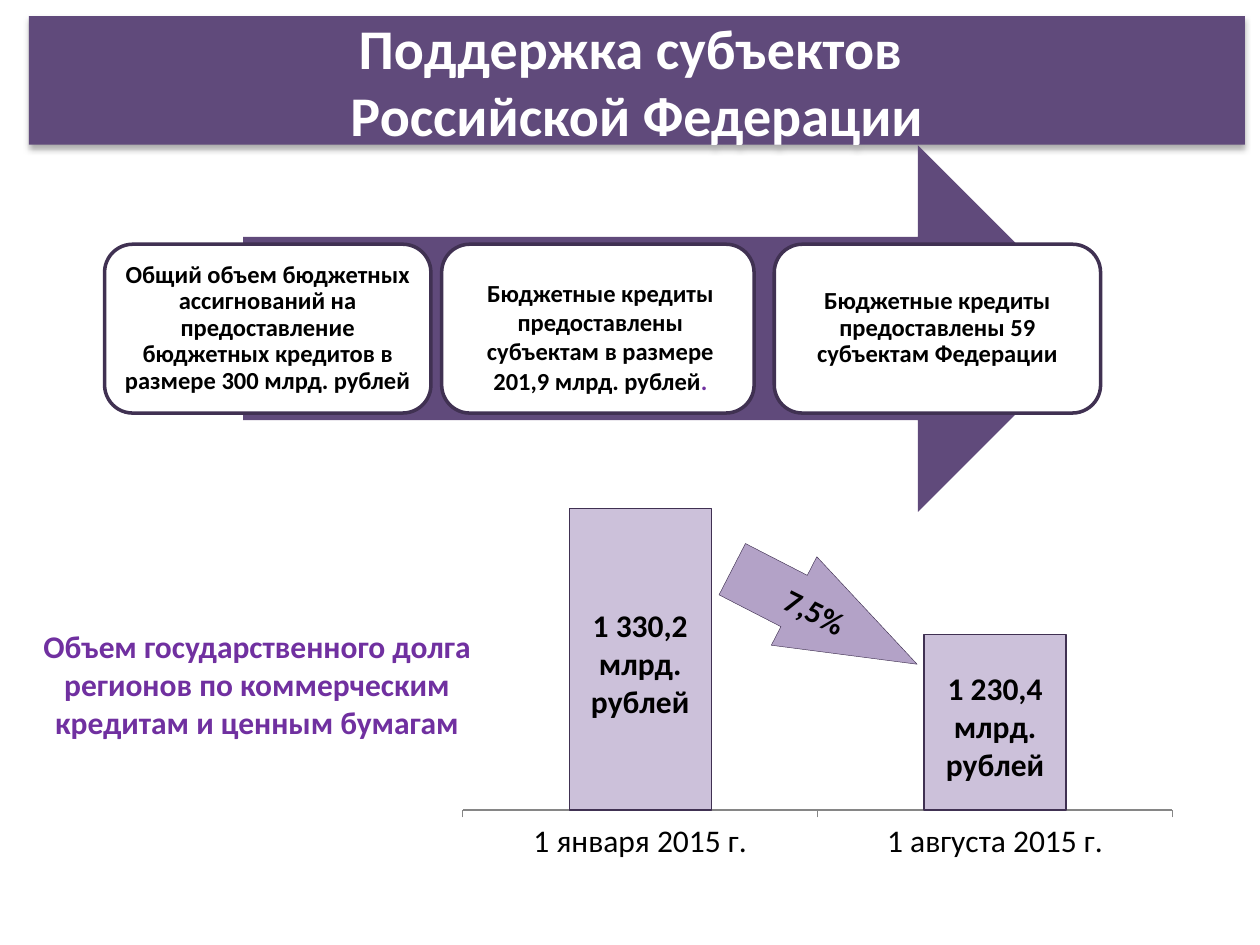
from lxml import etree
from pptx import Presentation
from pptx.chart.data import CategoryChartData
from pptx.dml.color import RGBColor
from pptx.enum.chart import XL_CHART_TYPE as ChartType, XL_TICK_MARK as Tick
from pptx.enum.shapes import MSO_SHAPE as Shape
from pptx.enum.text import MSO_ANCHOR as Anchor, MSO_AUTO_SIZE as AutoSize, PP_ALIGN as Align
from pptx.oxml import parse_xml
from pptx.oxml.ns import nsdecls
from pptx.util import Inches, Pt

PURPLE = RGBColor(0x60, 0x4A, 0x7B)
OUTLINE = RGBColor(0x40, 0x31, 0x52)
LILAC = RGBColor(0xB3, 0xA2, 0xC7)
PALE_LILAC = RGBColor(0xCC, 0xC1, 0xDA)
VIOLET = RGBColor(0x70, 0x30, 0xA0)
GREY = RGBColor(0x86, 0x86, 0x86)
WHITE = RGBColor(0xFF, 0xFF, 0xFF)
BLACK = RGBColor(0, 0, 0)
FONT = "Calibri"

prs = Presentation()
prs.slide_width, prs.slide_height = Inches(10), Inches(7.5)
slide = prs.slides.add_slide(prs.slide_layouts[5])
shapes = slide.shapes


def area(left, top, width, height):
    """Turn percentages of the slide into a position and size."""
    across, down = prs.slide_width / 100, prs.slide_height / 100
    return [round(v) for v in (left * across, top * down, width * across, height * down)]


def write(frame, text, size, color, align=Align.CENTER):
    frame.word_wrap = True
    frame.text = text
    for paragraph in frame.paragraphs:
        paragraph.alignment = align
        for run in paragraph.runs:
            run.font.name, run.font.size, run.font.bold = FONT, Pt(size), True
            run.font.color.rgb = color


# Title banner
title = shapes.title
title.left, title.top, title.width, title.height = area(2.3, 1.7, 96.5, 13.6)
title.fill.solid()
title.fill.fore_color.rgb = PURPLE
write(title.text_frame, "Поддержка субъектов \nРоссийской Федерации", 32, WHITE)
title.text_frame.auto_size = AutoSize.NONE
title.text_frame.vertical_anchor = Anchor.MIDDLE
title._element.spPr.append(parse_xml(
    f'<a:effectLst {nsdecls("a")}><a:outerShdw blurRad="44450" dist="27940" dir="5400000">'
    '<a:srgbClr val="000000"><a:alpha val="32000"/></a:srgbClr></a:outerShdw></a:effectLst>'))

# Large arrow behind the cards
big_arrow = shapes.add_shape(Shape.RIGHT_ARROW, *area(19.3, 15.37, 68.1, 38.8))
big_arrow.shadow.inherit = False
big_arrow.fill.solid()
big_arrow.fill.fore_color.rgb = PURPLE
big_arrow.line.fill.background()

# Cards: left and width of the outline
cards = [(8.3, 25.9), (35.05, 24.8), (61.45, 25.9)]
for left, width in cards:
    card = shapes.add_shape(Shape.ROUNDED_RECTANGLE, *area(left, 25.85, width, 17.87))
    card.shadow.inherit = False
    card.fill.solid()
    card.fill.fore_color.rgb = WHITE
    card.line.color.rgb, card.line.width = OUTLINE, Pt(2)

# Texts of the outer cards
outer_texts = [
    "Общий объем бюджетных ассигнований на предоставление бюджетных кредитов "
    "в размере 300 млрд. рублей",
    "Бюджетные кредиты предоставлены 59 субъектам Федерации",
]
for (left, width), text in zip(cards[::2], outer_texts):
    frame = shapes.add_textbox(*area(left + 0.65, 26.67, width - 1.3, 16.13)).text_frame
    write(frame, text, 14, BLACK)
    frame.vertical_anchor = Anchor.MIDDLE
    frame.paragraphs[0].line_spacing = 0.9
    frame.margin_left = frame.margin_right = Inches(0.06)
    frame.margin_top = frame.margin_bottom = Inches(0.06)

# Debt chart
debt = CategoryChartData()
debt.categories = ["1 января 2015 г.", "1 августа 2015 г."]
debt.add_series("Series 1", (4.3, 2.5))
chart = shapes.add_chart(ChartType.COLUMN_STACKED, *area(34.95, 41.63, 59.3, 50.1), debt).chart
chart.has_legend = chart.has_title = False
chart.font.name, chart.font.size = FONT, Pt(18)
chart.font.color.rgb = BLACK

chart.value_axis.visible = chart.value_axis.has_major_gridlines = False
dates = chart.category_axis
dates.major_tick_mark = Tick.OUTSIDE
dates.format.line.color.rgb = GREY

plot = chart.plots[0]
plot.gap_width, plot.overlap, plot.vary_by_categories = 150, 100, False
bars = plot.series[0]
bars.format.fill.solid()
bars.format.fill.fore_color.rgb = PALE_LILAC
bars.format.line.color.rgb, bars.format.line.width = OUTLINE, Pt(0.75)
bars.data_labels.show_value = True
for point, amount in enumerate(["1 330,2", "1 230,4"]):
    label = bars.points[point].data_label
    write(label.text_frame, f"{amount}\nмлрд. рублей", 18, BLACK)

# Fixed inner plot area, and labels slightly below the middle of their bars
plot_area = chart._chartSpace.chart.plotArea
for old in plot_area.findall("{*}layout"):
    plot_area.remove(old)
plot_settings = [("layoutTarget", "inner"), ("xMode", "edge"), ("yMode", "edge"),
                 ("x", 0.03), ("y", 0.14), ("w", 0.95), ("h", 0.74)]
placements = [(plot_area, 0, plot_settings)]
for label in plot_area.findall(".//{*}dLbl"):
    for old in label.findall("{*}layout"):
        label.remove(old)
    placements.append((label, 1, [("x", 0), ("y", 0.01)]))
for parent, index, settings in placements:
    layout = parse_xml(f'<c:layout {nsdecls("c")}><c:manualLayout/></c:layout>')
    for tag, value in settings:
        etree.SubElement(layout[0], f"{{{layout.nsmap['c']}}}{tag}").set("val", str(value))
    parent.insert(index, layout)

# Chart caption
caption = shapes.add_textbox(*area(2.3, 65.73, 36.2, 21.6))
write(caption.text_frame, "Объем государственного долга регионов по коммерческим "
      "кредитам и ценным бумагам", 18, VIOLET)

# Decrease arrow and its percentage
drop_arrow = shapes.add_shape(Shape.RIGHT_ARROW, *area(57.2, 60, 16.5, 10.53))
drop_arrow.shadow.inherit = False
drop_arrow.rotation = 27.2
drop_arrow.adjustments[0], drop_arrow.adjustments[1] = 0.58, 1.39
drop_arrow.fill.solid()
drop_arrow.fill.fore_color.rgb = LILAC
drop_arrow.line.color.rgb, drop_arrow.line.width = OUTLINE, Pt(0.25)
drop = shapes.add_textbox(*area(61.1, 62.53, 8.7, 5.33))
drop.rotation = 26.7
write(drop.text_frame, "7,5%", 18, BLACK, Align.LEFT)

# Text of the middle card, with a coloured full stop
granted = shapes.add_textbox(*area(37.4, 28.73, 20.5, 13.87)).text_frame
write(granted, "Бюджетные кредиты предоставлены субъектам в размере 201,9 млрд. рублей",
      14, BLACK)
full_stop = granted.paragraphs[0].add_run()
full_stop.text = "."
full_stop.font.name, full_stop.font.size, full_stop.font.bold = FONT, Pt(14), True
full_stop.font.color.rgb = VIOLET

prs.save("out.pptx")
